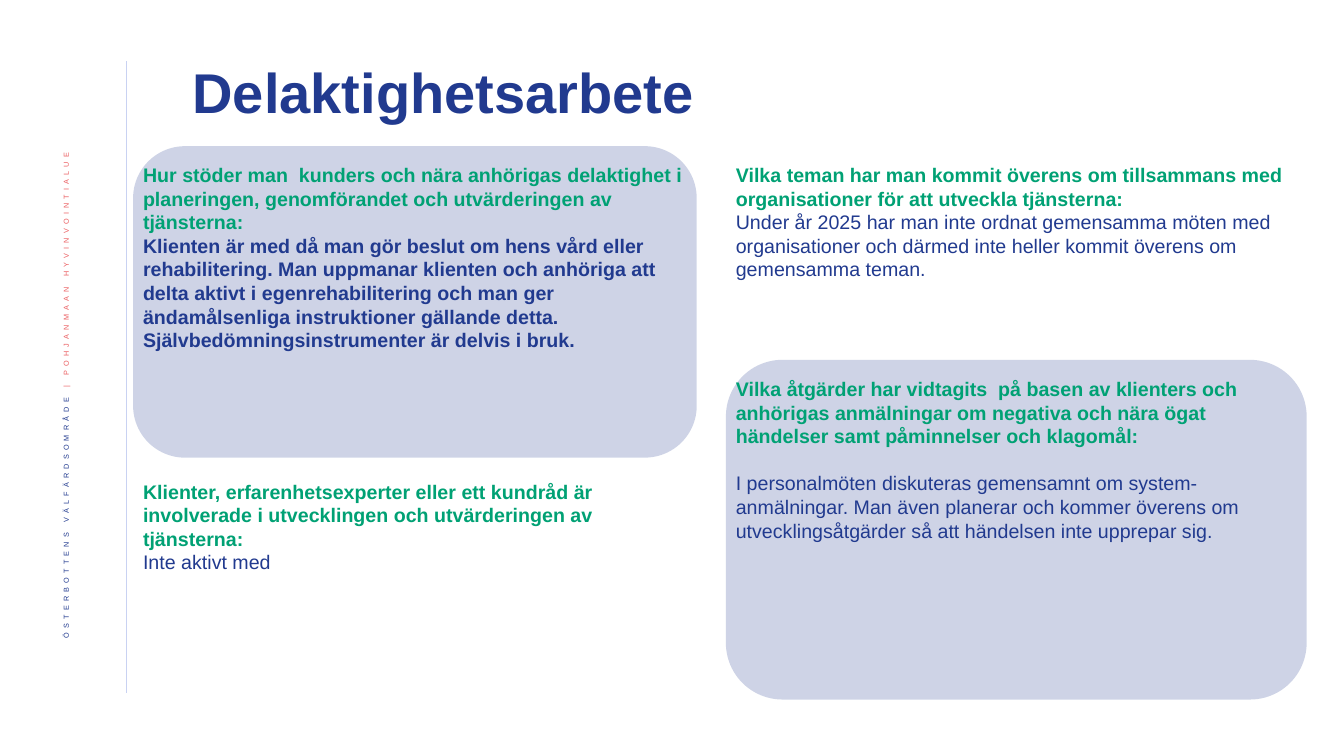
from pptx import Presentation
from pptx.dml.color import RGBColor
from pptx.enum.shapes import MSO_CONNECTOR as CONN, MSO_SHAPE as SHAPE
from pptx.enum.text import MSO_ANCHOR as ANCHOR, PP_ALIGN as ALIGN
from pptx.oxml.ns import qn
from pptx.util import Inches, Pt
from lxml import etree

COLORS = {"blue": "213A8F", "green": "00A174", "coral": "EB5C5F", "rule": "C9D2F2"}
LEFT, RIGHT = (1.32, 5.59), (7.2, 5.76)


def style(r, size, color, bold=False):
    r.font.name = "Arial"
    r.font.size = Pt(size)
    r.font.bold = bold
    r.font.color.rgb = RGBColor.from_string(COLORS[color])


def add_text(left, top, width, height):
    sp = slide.shapes.add_textbox(Inches(left), Inches(top), Inches(width), Inches(height))
    sp.text_frame.word_wrap = True
    return sp.text_frame


prs = Presentation()
prs.slide_width, prs.slide_height = Inches(13.33), Inches(7.5)
slide = prs.slides.add_slide(prs.slide_layouts[5])

rule = slide.shapes.add_connector(CONN.STRAIGHT, Inches(1.25), Inches(0.61), Inches(1.25), Inches(6.88))
rule.line.color.rgb = RGBColor.from_string(COLORS["rule"])
rule.line.width = Pt(0.5)
etree.SubElement(rule._element.spPr, qn("a:effectLst"))

tf = add_text(0.42, 1.42, 0.52, 5.73)
tf.vertical_anchor = ANCHOR.MIDDLE
tf._txBody.bodyPr.set("vert", "vert270")
p = tf.paragraphs[0]
p.alignment = ALIGN.RIGHT
p.line_spacing = 0.9
for text, color in [("ÖSTERBOTTENS VÄLFÄRDSOMRÅDE ", "blue"), ("| POHJANMAAN HYVINVOINTIALUE", "coral")]:
    r = p.add_run()
    r.text = text
    style(r, 9, color)
    rPr = r.font._element
    rPr.set("baseline", "30000")
    rPr.set("spc", "300")

title = slide.shapes.title
title.left, title.top, title.width, title.height = Inches(1.81), Inches(0.45), Inches(9.98), Inches(0.99)
tf = title.text_frame
tf.text = "Delaktighetsarbete"
tf.vertical_anchor = ANCHOR.MIDDLE
p = tf.paragraphs[0]
p.alignment = ALIGN.LEFT
p.line_spacing = 0.9
style(p.runs[0], 40, "blue", True)

for (left, width), top, height in [(LEFT, 1.45, 3.09), (RIGHT, 3.57, 3.37)]:
    sp = slide.shapes.add_shape(SHAPE.ROUNDED_RECTANGLE, Inches(left), Inches(top), Inches(width), Inches(height))
    sp.shadow.inherit = False
    sp.line.fill.background()
    sp.fill.solid()
    sp.fill.fore_color.rgb = RGBColor.from_string(COLORS["blue"])
    clr = sp._element.spPr.find(qn("a:solidFill"))[0]
    etree.SubElement(clr, qn("a:alpha")).set("val", "22000")

sections = [
    (LEFT, 1.57, 1.99, True, 0,
     "Hur stöder man  kunders och nära anhörigas delaktighet i planeringen, genomförandet och utvärderingen av tjänsterna:",
     ["Klienten är med då man gör beslut om hens vård eller rehabilitering. Man uppmanar klienten och anhöriga att delta aktivt i egenrehabilitering och man ger ändamålsenliga instruktioner gällande detta.",
      "Självbedömningsinstrumenter är delvis i bruk."]),
    (RIGHT, 1.57, 1.28, False, 0,
     "Vilka teman har man kommit överens om tillsammans med organisationer för att utveckla tjänsterna:",
     ["Under år 2025 har man inte ordnat gemensamma möten med organisationer och därmed inte heller kommit överens om gemensamma teman."]),
    (LEFT, 4.71, 1.04, False, 0,
     "Klienter, erfarenhetsexperter eller ett kundråd är involverade i utvecklingen och utvärderingen av tjänsterna:",
     ["Inte aktivt med"]),
    (RIGHT, 3.69, 1.75, False, 17,
     "Vilka åtgärder har vidtagits  på basen av klienters och anhörigas anmälningar om negativa och nära ögat händelser samt påminnelser och klagomål:",
     ["I personalmöten diskuteras gemensamnt om system-anmälningar. Man även planerar och kommer överens om utvecklingsåtgärder så att händelsen inte upprepar sig."]),
]
for (left, width), top, height, bold, gap, question, answers in sections:
    tf = add_text(left, top, width, height)
    tf.text = "\n".join([question] + answers)
    for i, p in enumerate(tf.paragraphs):
        style(p.runs[0], 14, "blue" if i else "green", bold or i == 0)
        if i == 1 and gap:
            p.space_before = Pt(gap)

prs.save("out.pptx")
